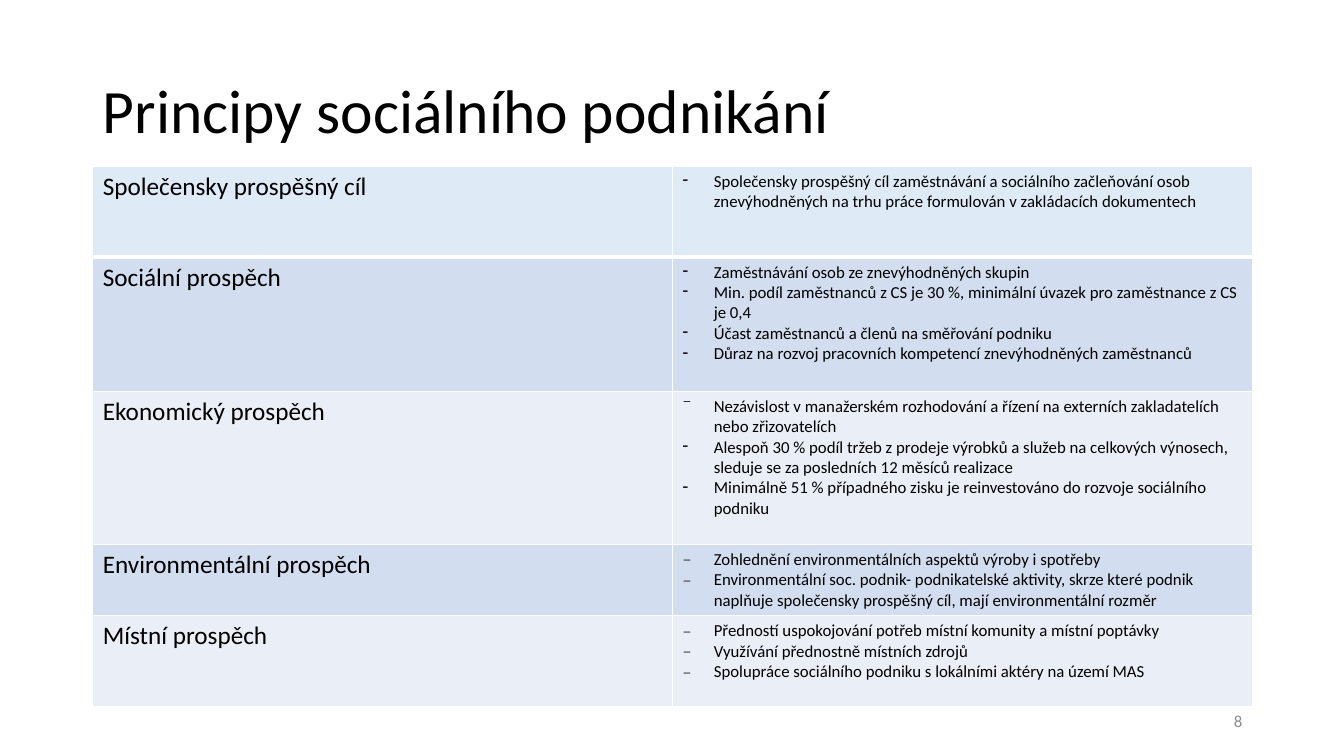
from dataclasses import dataclass

from pptx import Presentation
from pptx import util as u
from pptx.dml.color import RGBColor
from pptx.enum import text
from pptx.oxml import parse_xml
from pptx.oxml.ns import nsdecls

EMU_PER_PX = 9144  # 100 px to the inch


@dataclass(frozen=True)
class Theme:
    font: str = "Calibri"
    ink: str = "000000"
    muted: str = "8C8C8C"
    rule: str = "FFFFFF"
    first_band: str = "DEEBF7"
    bands: tuple = ("EAEFF7", "D2DEEF")
    title_size: int = 44
    label_size: int = 18
    small_size: int = 12


# Label, row height in px, list of (bullet, text)
PRINCIPLES = [
    ("Společensky prospěšný cíl", 90, [
        ("-", "Společensky prospěšný cíl zaměstnávání a sociálního začleňování osob "
              "znevýhodněných na trhu práce formulován v zakládacích dokumentech"),
    ]),
    ("Sociální prospěch", 133, [
        ("-", "Zaměstnávání osob ze znevýhodněných skupin"),
        ("-", "Min. podíl zaměstnanců z CS je 30 %, minimální úvazek pro zaměstnance z CS je 0,4"),
        ("-", "Účast zaměstnanců a členů na směřování podniku"),
        ("-", "Důraz na rozvoj pracovních kompetencí znevýhodněných zaměstnanců"),
    ]),
    ("Ekonomický prospěch", 152, [
        ("⁻", "Nezávislost v manažerském rozhodování a řízení na externích zakladatelích "
              "nebo zřizovatelích"),
        ("-", "Alespoň 30 % podíl tržeb z prodeje výrobků a služeb na celkových výnosech, "
              "sleduje se za posledních 12 měsíců realizace"),
        ("-", "Minimálně 51 % případného zisku je reinvestováno do rozvoje sociálního podniku"),
    ]),
    ("Environmentální prospěch", 71, [
        ("₋", "Zohlednění environmentálních aspektů výroby i spotřeby"),
        ("₋", "Environmentální soc. podnik- podnikatelské aktivity, skrze které podnik "
              "naplňuje společensky prospěšný cíl, mají environmentální rozměr"),
    ]),
    ("Místní prospěch", 90, [
        ("₋", "Předností uspokojování potřeb místní komunity a místní poptávky"),
        ("₋", "Využívání přednostně místních zdrojů"),
        ("₋", "Spolupráce sociálního podniku s lokálními aktéry na území MAS"),
    ]),
]


def px(length):
    return u.Emu(length * EMU_PER_PX)


def write(paragraph, words, *, font, size, color, align=text.PP_ALIGN.LEFT,
          spacing=None, bullet=None, indent=31):
    """Put words into a paragraph with its format."""
    run = paragraph.add_run()
    run.text = words
    run.font.name = font
    run.font.size = u.Pt(size)
    run.font.color.rgb = RGBColor.from_string(color)
    paragraph.alignment = align
    if spacing:
        paragraph.line_spacing = spacing
    if bullet:
        properties = paragraph._p.get_or_add_pPr()
        properties.set("marL", str(px(indent)))
        properties.set("indent", str(-px(indent)))
        properties.append(parse_xml(f'<a:buChar {nsdecls("a")} char="{bullet}"/>'))


class SlideBuilder:
    def __init__(self, slide, theme):
        self.slide = slide
        self.theme = theme

    def title(self, words, left, top, width, height):
        heading = self.slide.shapes.title
        heading.left, heading.top = px(left), px(top)
        heading.width, heading.height = px(width), px(height)
        frame = heading.text_frame
        frame.auto_size = text.MSO_AUTO_SIZE.NONE
        frame.vertical_anchor = text.MSO_ANCHOR.MIDDLE
        write(frame.paragraphs[0], words, font=self.theme.font,
              size=self.theme.title_size, color=self.theme.ink, spacing=0.9)

    def borders(self, cell, **widths):
        properties = cell._tc.get_or_add_tcPr()
        for side in "LRTB":
            width = u.Pt(widths.get(side, 1))
            properties.append(parse_xml(
                f'<a:ln{side} {nsdecls("a")} w="{width}"><a:solidFill>'
                f'<a:srgbClr val="{self.theme.rule}"/></a:solidFill></a:ln{side}>'))

    def principles_table(self, principles, left, top, width):
        theme = self.theme
        height = sum(row_height for _, row_height, _ in principles)
        table = self.slide.shapes.add_table(
            len(principles), 2, px(left), px(top), px(width), px(height)).table
        table.first_row = table.horz_banding = False
        for column in table.columns:
            column.width = px(width // 2)

        for index, (label, row_height, points) in enumerate(principles):
            table.rows[index].height = px(row_height)
            label_cell, points_cell = table.rows[index].cells
            # Heavier rule below the first row
            for cell in (label_cell, points_cell):
                self.borders(cell, T=3 if index == 1 else 1, B=3 if index == 0 else 1)
                cell.fill.solid()
                band = theme.bands[index % 2] if index else theme.first_band
                cell.fill.fore_color.rgb = RGBColor.from_string(band)
            write(label_cell.text_frame.paragraphs[0], label, font=theme.font,
                  size=theme.label_size, color=theme.ink)
            frame = points_cell.text_frame
            for number, (bullet, point) in enumerate(points):
                paragraph = frame.add_paragraph() if number else frame.paragraphs[0]
                write(paragraph, point, font=theme.font, size=theme.small_size,
                      color=theme.ink, bullet=bullet)

    def page_number(self, number, left, top, width, height):
        frame = self.slide.shapes.add_textbox(
            px(left), px(top), px(width), px(height)).text_frame
        frame.word_wrap = True
        frame.vertical_anchor = text.MSO_ANCHOR.MIDDLE
        write(frame.paragraphs[0], number, font=self.theme.font,
              size=self.theme.small_size, color=self.theme.muted,
              align=text.PP_ALIGN.RIGHT)


def main():
    deck = Presentation()
    deck.slide_width, deck.slide_height = px(1333), px(750)
    title_only = deck.slide_layouts[5]
    builder = SlideBuilder(deck.slides.add_slide(title_only), Theme())

    builder.title("Principy sociálního podnikání", 92, 40, 1150, 145)
    builder.principles_table(PRINCIPLES, 92, 165, 1150)
    builder.page_number("8", 942, 695, 300, 40)

    deck.save("out.pptx")


if __name__ == "__main__":
    main()
